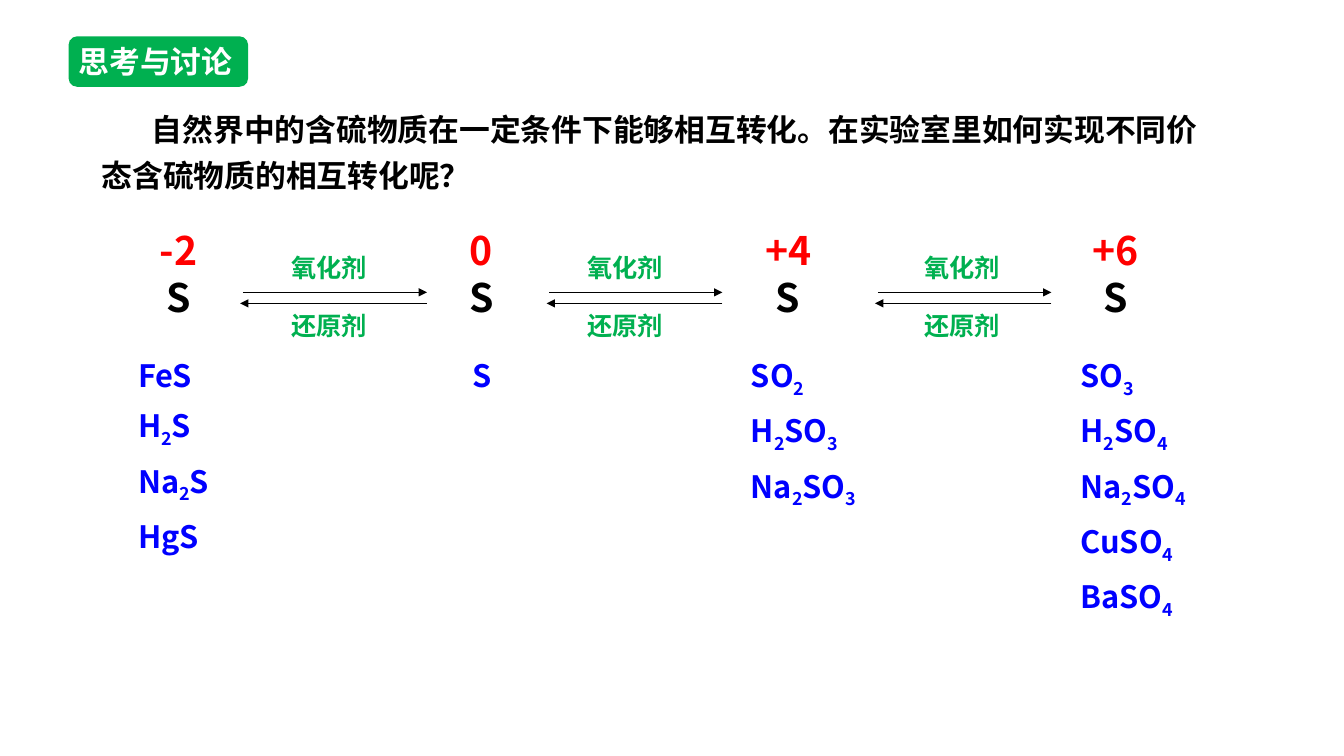
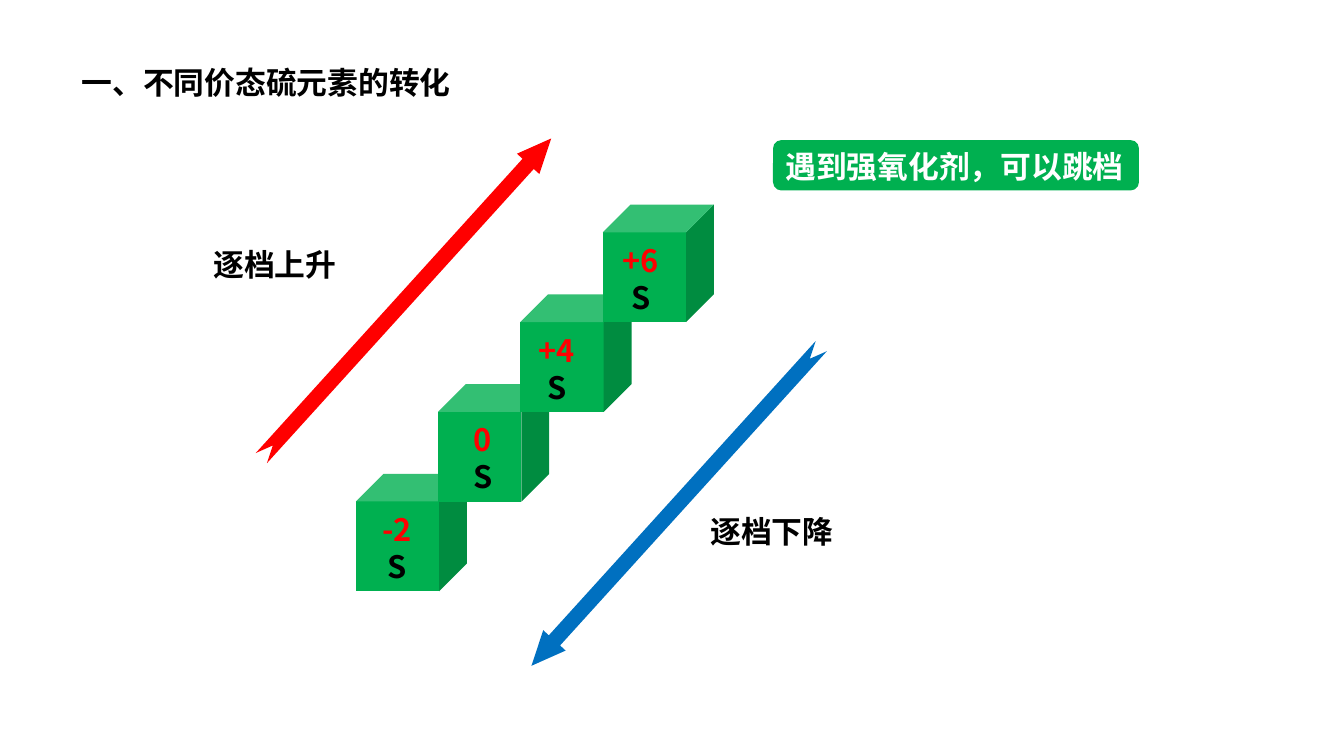
from itertools import groupby

from lxml.etree import SubElement
from pptx import Presentation
from pptx.dml.color import RGBColor
from pptx.enum.shapes import MSO_CONNECTOR, MSO_SHAPE
from pptx.enum.text import MSO_ANCHOR, MSO_AUTO_SIZE, PP_ALIGN
from pptx.oxml.ns import qn
from pptx.util import Pt

GREEN, RED, BLUE, NAVY = "00B050", "FF0000", "0000FF", "0070C0"
BLACK, WHITE = "000000", "FFFFFF"
CJK_FONT, LATIN_FONT = "Noto Sans CJK SC", "Arial"
COMPARISON_LAYOUT, TITLE_ONLY_LAYOUT = 4, 5


def color(value):
    return RGBColor.from_string(value)


def set_all(target, formats):
    for name, value in formats.items():
        setattr(target, name, value)


class Deck:
    """Holds the shared text style and the slide being filled."""

    def __init__(self):
        self.presentation = Presentation()
        set_all(self.presentation, {"slide_width": Pt(960), "slide_height": Pt(540)})
        self.slide = None

    def new_slide(self, layout):
        layouts = self.presentation.slide_layouts
        self.slide = self.presentation.slides.add_slide(layouts[layout])

    def place(self, shape, left, top, width, height):
        set_all(shape, {"left": Pt(left), "top": Pt(top),
                        "width": Pt(width), "height": Pt(height)})

    def frame(self, shape, wrap=True, anchor=MSO_ANCHOR.TOP,
              auto_size=MSO_AUTO_SIZE.SHAPE_TO_FIT_TEXT):
        set_all(shape.text_frame, {
            "word_wrap": wrap, "vertical_anchor": anchor, "auto_size": auto_size,
            "margin_left": Pt(7.2), "margin_right": Pt(7.2),
            "margin_top": Pt(3.6), "margin_bottom": Pt(3.6)})

    def run(self, paragraph, text, fill, size=22, font=CJK_FONT):
        run = paragraph.add_run()
        run.text = text
        set_all(run.font, {"size": Pt(size), "bold": True, "name": font})
        run.font.color.rgb = color(fill)
        properties = run.font._element
        SubElement(properties, qn("a:ea")).set("typeface", CJK_FONT)
        return properties

    def paragraph(self, frame, index, align=PP_ALIGN.LEFT, **formats):
        paragraph = frame.add_paragraph() if index else frame.paragraphs[0]
        set_all(paragraph, {"alignment": align, "space_before": Pt(0), **formats})
        return paragraph

    def indent(self, paragraph, first_line=0):
        properties = paragraph._p.get_or_add_pPr()
        properties.set("marL", "0")
        properties.set("indent", str(Pt(first_line)))
        return properties

    def title(self, text, box, fill=BLACK, font=CJK_FONT):
        shape = self.slide.shapes.title
        self.place(shape, *box)
        self.frame(shape, wrap=False, anchor=MSO_ANCHOR.MIDDLE,
                   auto_size=MSO_AUTO_SIZE.NONE)
        self.run(self.paragraph(shape.text_frame, 0), text, fill, font=font)
        return shape

    def badge_title(self, text, box):
        """Puts the title on a rounded badge that lies behind it."""
        title = self.title(text, box, WHITE)
        badge = self.shape(MSO_SHAPE.ROUNDED_RECTANGLE, box, GREEN)
        title._element.addprevious(badge._element)

    def shape(self, kind, box, fill):
        shape = self.slide.shapes.add_shape(kind, *map(Pt, box))
        shape.shadow.inherit = False
        shape.fill.solid()
        shape.fill.fore_color.rgb = color(fill)
        shape.line.fill.background()
        return shape

    def badge(self, text, box):
        shape = self.shape(MSO_SHAPE.ROUNDED_RECTANGLE, box, GREEN)
        self.frame(shape, wrap=False)
        self.run(self.paragraph(shape.text_frame, 0), text, WHITE)

    def block_arrow(self, box, rotation, fill):
        arrow = self.shape(MSO_SHAPE.NOTCHED_RIGHT_ARROW, box, fill)
        arrow.rotation = rotation
        arrow.adjustments[1] = 1.133

    def text(self, lines, box, size=22, font=CJK_FONT, anchor=MSO_ANCHOR.TOP,
             align=PP_ALIGN.LEFT, first_line=0, **formats):
        """Adds a text box; lines holds (text, colour) pairs, one per paragraph."""
        shape = self.slide.shapes.add_textbox(*map(Pt, box))
        self.frame(shape, anchor=anchor)
        for index, (text, fill) in enumerate(lines):
            paragraph = self.paragraph(shape.text_frame, index, align, **formats)
            self.indent(paragraph, first_line)
            self.run(paragraph, text, fill, size, font)

    def valence(self, charge, box, size):
        """Writes the oxidation number above the sulfur symbol."""
        align = PP_ALIGN.LEFT if charge == "0" else PP_ALIGN.CENTER
        self.text([(charge, RED), ("S", BLACK)], box, size, align=align)

    def formulas(self, placeholder_index, formulas, box):
        """Fills a body placeholder with formulas, digits as subscripts."""
        shape = self.slide.placeholders[placeholder_index]
        self.place(shape, *box)
        self.frame(shape)
        for index, formula in enumerate(formulas):
            paragraph = self.paragraph(shape.text_frame, index, space_before=Pt(9.5))
            SubElement(self.indent(paragraph), qn("a:buNone"))
            for is_digit, letters in groupby(formula, str.isdigit):
                properties = self.run(paragraph, "".join(letters), BLUE)
                if is_digit:
                    properties.set("baseline", "-25000")

    def line_arrow(self, start, end, y):
        line = self.slide.shapes.add_connector(
            MSO_CONNECTOR.STRAIGHT, Pt(start), Pt(y), Pt(end), Pt(y))
        line.line.width = Pt(0.5)
        line.line.color.rgb = color(BLACK)
        SubElement(line.line._get_or_add_ln(), qn("a:tailEnd"), type="triangle")
        SubElement(line._element.spPr, qn("a:effectLst"))


def discussion_slide(deck):
    deck.new_slide(COMPARISON_LAYOUT)
    deck.badge_title("思考与讨论", (49, 26, 128.2, 36))
    question = "自然界中的含硫物质在一定条件下能够相互转化。在实验室里如何实现不同价态含硫物质的相互转化呢？"
    deck.text([(question, BLACK)], (65.5, 69, 808.6, 74.2),
              first_line=36, line_spacing=1.25)

    # charge, its left and width, formulas, their left, width and height
    columns = [
        ("-2", 103.7, 47.5, ["FeS", "H2S", "Na2S", "HgS"], 91.4, 69.8, 149.8),
        ("0", 328.3, 27.4, ["S"], 330.5, 27.4, 33.8),
        ("+4", 533.5, 59, ["SO2", "H2SO3", "Na2SO3"], 529.2, 98.6, 110.9),
        ("+6", 769.7, 54, ["SO3", "H2SO4", "Na2SO4", "CuSO4", "BaSO4"],
         764.6, 95, 188.6),
    ]
    for index, column in enumerate(columns, 1):
        charge, charge_left, charge_width, formulas, left, width, height = column
        deck.valence(charge, (charge_left, 158.4, charge_width, 74.9), 28)
        deck.formulas(index, formulas, (left, 251.3, width, height))

    # arrow left and right ends, label left
    for left, right, label_left in [(171.5, 305, 200.9), (390.5, 516, 412.6),
                                    (625, 751, 653)]:
        deck.line_arrow(left + 2, right, 208.8)
        deck.line_arrow(right, left, 216.7)
        for label, top in [("氧化剂", 176.4), ("还原剂", 218.2)]:
            deck.text([(label, GREEN)], (label_left, top, 69.1, 28.8), 18,
                      anchor=MSO_ANCHOR.MIDDLE)


def steps_slide(deck):
    deck.new_slide(TITLE_ONLY_LAYOUT)
    deck.title("一、不同价态硫元素的转化", (51.1, 41.8, 280.8, 33.8), font=LATIN_FONT)

    steps = [("-2", 260, 47.5), ("0", 331.2, 27.4),
             ("+4", 373.7, 48.2), ("+6", 434.9, 45.4)]
    tops = [338.4 - 64.1 * index for index in range(len(steps))]
    for index, top in enumerate(tops):
        deck.shape(MSO_SHAPE.CUBE, (254.2 + 58.8 * index, top, 79.3, 84), GREEN)
    for (charge, left, width), top in zip(steps, tops):
        deck.valence(charge, (left, top + 23, width, 60.5), 22)

    for label, left, top in [("逐档上升", 145.4, 172.1), ("逐档下降", 500.4, 362.9)]:
        deck.text([(label, BLACK)], (left, top, 103, 33.8), font=LATIN_FONT)
    deck.block_arrow((136.1, 202.3, 308.2, 21.6), 312.2, RED)
    deck.block_arrow((329, 350.6, 308.2, 21.6), 132.2, NAVY)
    deck.badge("遇到强氧化剂，可以跳档", (552.2, 100.1, 261.4, 36))


def main():
    deck = Deck()
    discussion_slide(deck)
    steps_slide(deck)
    deck.presentation.save("out.pptx")


if __name__ == "__main__":
    main()
